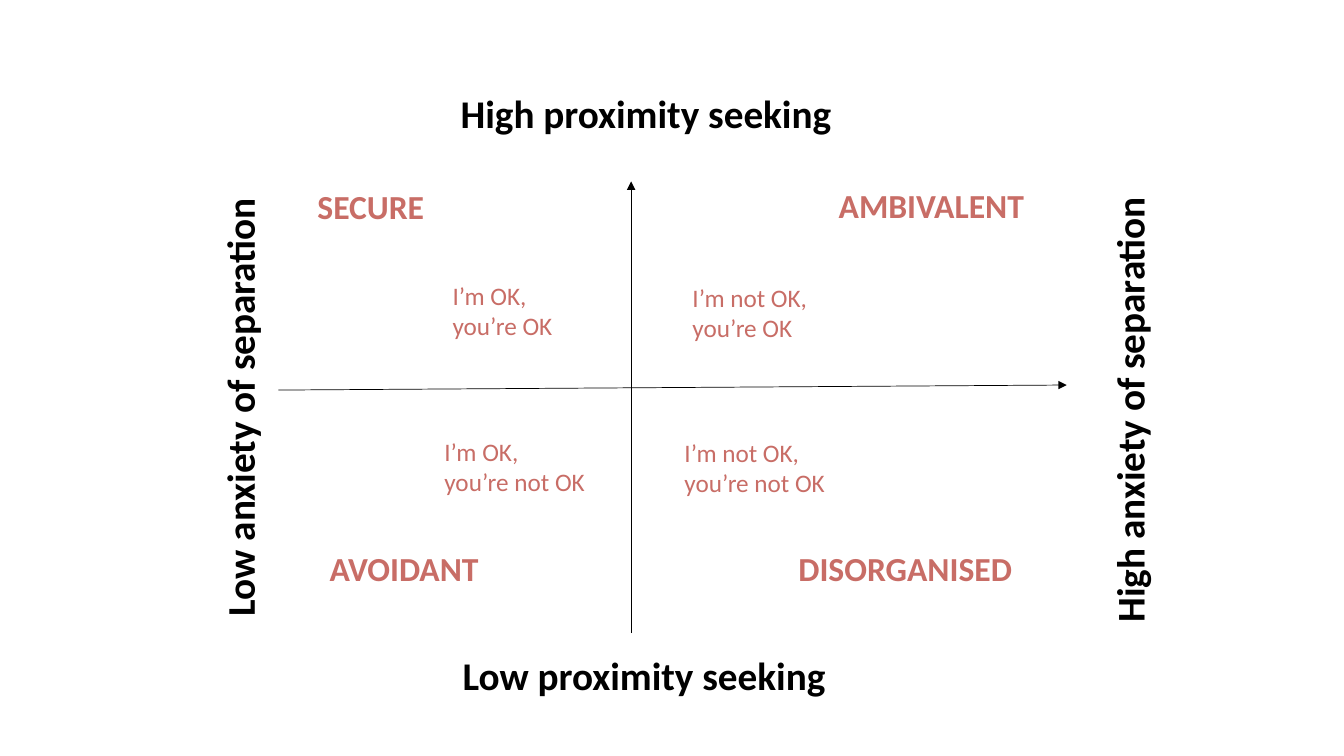
from lxml import etree
from pptx import Presentation
from pptx.dml.color import RGBColor
from pptx.enum import shapes, text
from pptx.oxml import ns
from pptx.util import Inches, Pt

INK = {"axis": "000000", "style": "C86D66"}
FONT = "Calibri"


def label(slide, box, words, size, ink, bold=True, wrap=False, turn=0):
    area = slide.shapes.add_textbox(*map(Inches, box))
    area.rotation = turn
    frame = area.text_frame
    frame.word_wrap = wrap
    frame.auto_size = text.MSO_AUTO_SIZE.SHAPE_TO_FIT_TEXT
    frame.text = words
    for para in frame.paragraphs:
        for run in para.runs:
            run.font.name = FONT
            run.font.size = Pt(size)
            run.font.bold = bold
            run.font.color.rgb = RGBColor.from_string(INK[ink])


def arrow(slide, start, end):
    line = slide.shapes.add_connector(
        shapes.MSO_CONNECTOR.STRAIGHT, *map(Inches, start + end))
    line.line.width = Pt(0.5)
    line.line.color.rgb = RGBColor.from_string(INK["axis"])
    stroke = line.line._get_or_add_ln()
    etree.SubElement(stroke, ns.qn("a:tailEnd"), type="triangle")
    etree.SubElement(line._element.spPr, ns.qn("a:effectLst"))


def axes(slide, box, mid):
    """Draw the two crossing arrows and name their four ends."""
    left, top, width, height = box
    right, base = left + width, top + height
    arrow(slide, (left, mid[1] + 0.02), (right, mid[1] - 0.03))
    arrow(slide, (mid[0], base), (mid[0], top))
    ends = [
        ("Low anxiety of separation", -2.59, 1.92, 4.41, 270),
        ("High anxiety of separation", 6.2, 1.95, 4.48, 270),
        ("High proximity seeking", 1.71, -0.96, 3.92, 0),
        ("Low proximity seeking", 1.73, 4.61, 3.85, 0),
    ]
    for words, x, y, wide, turn in ends:
        label(slide, (left + x, top + y, wide, 0.57), words, 28, "axis",
              turn=turn)


def quadrant(slide, corner, name, view):
    """Place a style's name and its view of self and other.

    Both are (words, x, y, width), measured from the quadrant's corner.
    """
    left, top = corner
    words, x, y, wide = view
    label(slide, (left + x, top + y, wide, 0.71), words, 18, "style",
          bold=False, wrap=True)
    words, x, y, wide = name
    label(slide, (left + x, top + y, wide, 0.5), words, 24, "style")


def matrix(slide, box):
    left, top = box[:2]
    mid = (left + 3.5, top + 2.05)
    axes(slide, box, mid)
    quadrant(slide, (left, top), ("SECURE", 0.29, 0, 1.27),
             ("I’m OK,\nyou’re OK", 1.63, 0.93, 1.39))
    quadrant(slide, (mid[0], top), ("AMBIVALENT", 1.96, -0.01, 2.06),
             ("I’m not OK,\nyou’re OK", 0.51, 0.95, 1.56))
    quadrant(slide, (left, mid[1]), ("AVOIDANT", 0.41, 1.54, 1.69),
             ("I’m OK,\nyou’re not OK", 1.55, 0.43, 1.66))
    quadrant(slide, mid, ("DISORGANISED", 1.56, 1.54, 2.34),
             ("I’m not OK,\nyou’re not OK", 0.43, 0.44, 1.82))


def main():
    deck = Presentation()
    deck.slide_width, deck.slide_height = Inches(13.33), Inches(7.5)
    slide = deck.slides.add_slide(deck.slide_layouts[6])
    matrix(slide, (2.76, 1.8, 7.82, 4.48))
    deck.save("out.pptx")


if __name__ == "__main__":
    main()
